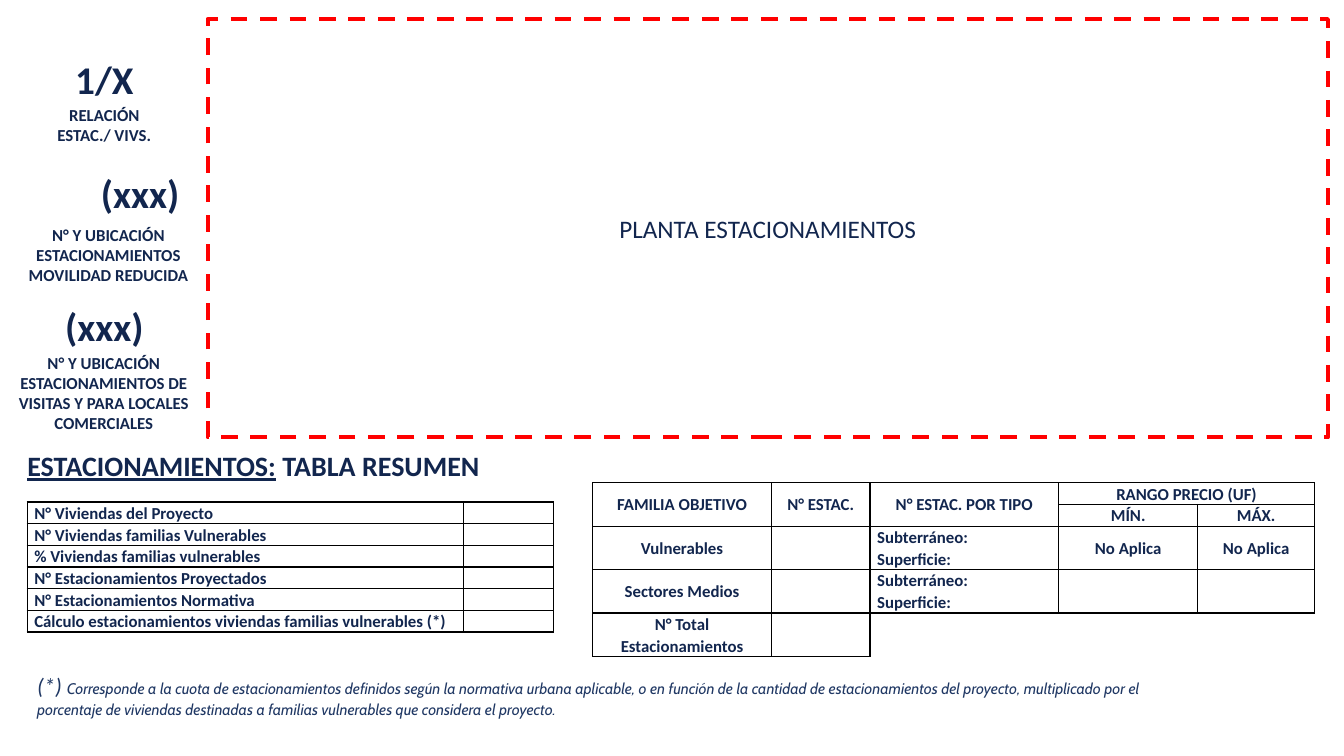
"""Build the parking summary slide with its plan frame and two tables."""
from lxml import etree
from pptx import Presentation
from pptx import util as u
from pptx.dml.color import RGBColor
from pptx.enum import dml, shapes, text
from pptx.oxml import ns

HUES = {"navy": "12264E", "note": "203864", "red": "FF0000", "black": "000000"}
MID = text.PP_ALIGN.CENTER
LEFT = text.PP_ALIGN.LEFT


class Board:
    """Hold the style and the slide; lengths are percent of slide size."""

    def __init__(self, deck):
        self.deck = deck
        self.slide = deck.slides.add_slide(deck.slide_layouts[5])
        self.base = {"name": "Calibri", "size": u.Pt(12), "bold": True}

    def wide(self, part):
        return round(self.deck.slide_width * part / 100)

    def high(self, part):
        return round(self.deck.slide_height * part / 100)

    def area(self, x, y, w, h):
        return self.wide(x), self.high(y), self.wide(w), self.high(h)

    def hue(self, name):
        return RGBColor.from_string(HUES[name])

    def words(self, frame, lines, align=MID, gap=1, hue="navy", **style):
        """Fill a frame; each line is a string or a list of (part, format)."""
        for i, line in enumerate(lines):
            para = frame.add_paragraph() if i else frame.paragraphs[0]
            para.alignment, para.line_spacing = align, gap
            for part, extra in [(line, {})] if isinstance(line, str) else line:
                run = para.add_run()
                run.text = part
                run.font.color.rgb = self.hue(hue)
                for key, value in {**self.base, **style, **extra}.items():
                    setattr(run.font, key, value)

    def label(self, box, lines, wrap=True, **style):
        frame = self.slide.shapes.add_textbox(*self.area(*box)).text_frame
        frame.word_wrap = wrap
        frame.auto_size = text.MSO_AUTO_SIZE.SHAPE_TO_FIT_TEXT
        self.words(frame, lines, **style)

    def title(self, box, lines, **style):
        head = self.slide.shapes.title
        head.left, head.top, head.width, head.height = self.area(*box)
        form = {"word_wrap": True, "auto_size": text.MSO_AUTO_SIZE.NONE,
                "vertical_anchor": text.MSO_ANCHOR.TOP}
        for key, value in form.items():
            setattr(head.text_frame, key, value)
        self.words(head.text_frame, lines, **style)

    def panel(self, box, lines, **style):
        pane = self.slide.shapes.add_shape(shapes.MSO_SHAPE.RECTANGLE, *self.area(*box))
        pane.shadow.inherit = False
        pane.fill.background()
        pane.line.color.rgb = self.hue("red")
        pane.line.width = u.Pt(3)
        pane.line.dash_style = dml.MSO_LINE.DASH
        pane.text_frame.vertical_anchor = text.MSO_ANCHOR.MIDDLE
        self.words(pane.text_frame, lines, **style)

    def edge(self, cell, sides):
        """Draw the named cell sides in black and clear the others."""
        props = cell._tc.get_or_add_tcPr()
        for side in "LRTB":
            line = etree.SubElement(props, ns.qn(f"a:ln{side}"), w=str(u.Pt(1)))
            if side in sides:
                fill = etree.SubElement(line, ns.qn("a:solidFill"))
                etree.SubElement(fill, ns.qn("a:srgbClr"), val=HUES["black"])
            else:
                etree.SubElement(line, ns.qn("a:noFill"))

    def table(self, x, y, cols, rows, cells, aligns, spans=(), bounds=None):
        box = self.area(x, y, sum(cols), sum(rows))
        grid = self.slide.shapes.add_table(len(rows), len(cols), *box).table
        grid.first_row = grid.horz_banding = False
        for col, size in zip(grid.columns, cols):
            col.width = self.wide(size)
        for row, size in zip(grid.rows, rows):
            row.height = self.high(size)
        form = {"margin_left": u.Inches(0.07), "margin_right": u.Inches(0.07),
                "margin_top": 0, "margin_bottom": 0,
                "vertical_anchor": text.MSO_ANCHOR.MIDDLE}
        for r, line in enumerate(cells):
            for c, value in enumerate(line):
                cell = grid.cell(r, c)
                for key, setting in form.items():
                    setattr(cell, key, setting)
                self.edge(cell, (bounds or {}).get((r, c), "LRTB"))
                cell.fill.background()
                if value:
                    align = aligns[c] if r > 1 else aligns[0]
                    self.words(cell.text_frame, value.split("\n"), align, 1.07)
                else:
                    para = cell.text_frame.paragraphs[0]._p
                    etree.SubElement(para, ns.qn("a:endParaRPr"), sz="1200")
        for start, end in spans:
            grid.cell(*start).merge(grid.cell(*end))


def main():
    deck = Presentation()
    deck.slide_width, deck.slide_height = u.Inches(13.33), u.Inches(7.5)
    board = Board(deck)
    big = {"size": u.Pt(28)}

    board.panel((15.45, 2.53, 83.35, 55.33), ["PLANTA ESTACIONAMIENTOS"],
                size=u.Pt(18), bold=False)
    board.label((4.8, 6.67, 5.93, 7.6), ["1/X"], wrap=False, **big)
    board.label((3.45, 13.2, 8.63, 6.67), ["RELACIÓN", "ESTAC./ VIVS."])
    board.label((5.25, 21.73, 10.35, 7.6), ["(xxx)"], **big)
    board.label((1.28, 29.07, 13.58, 9.47),
                ["N° Y UBICACIÓN ESTACIONAMIENTOS MOVILIDAD REDUCIDA"])
    board.label((4.05, 39.33, 7.43, 7.6), ["(xxx)"], wrap=False, **big)
    board.label((0, 46, 15.45, 12.13),
                ["N° Y UBICACIÓN ESTACIONAMIENTOS DE VISITAS Y PARA LOCALES COMERCIALES"])
    board.title((1.28, 58.67, 45.16, 5.87),
                [[("ESTACIONAMIENTOS:", {"underline": True}), (" TABLA RESUMEN", {})]],
                align=LEFT, size=u.Pt(20))

    items = ["N° Viviendas del Proyecto", "N° Viviendas familias Vulnerables",
             "% Viviendas familias vulnerables", "N° Estacionamientos Proyectados",
             "N° Estacionamientos Normativa",
             "Cálculo estacionamientos viviendas familias vulnerables (*)"]
    unit = 2.87
    board.table(2.03, 66.4, [32.48, 6.68], [unit] * len(items),
                [[item, ""] for item in items], [LEFT, LEFT])

    kinds = "Subterráneo:\nSuperficie:"
    cells = [
        ["FAMILIA OBJETIVO", "N° ESTAC.", "N° ESTAC. POR TIPO", "RANGO PRECIO (UF)", ""],
        ["", "", "", "MÍN.", "MÁX."],
        ["Vulnerables", "", kinds, "No Aplica", "No Aplica"],
        ["Sectores Medios", "", kinds, "", ""],
        ["N° Total\nEstacionamientos", "", "", "", ""],
    ]
    spans = [((0, c), (1, c)) for c in range(3)] + [((0, 3), (0, 4)), ((4, 2), (4, 4))]
    board.table(44.11, 63.87, [13.28, 7.35, 14.03, 10.35, 8.7],
                [unit] * 2 + [2 * unit] * 3, cells, [MID, MID, LEFT, MID, MID], spans,
                {(4, 2): "LT", (4, 3): "T", (4, 4): "T"})

    board.label((2.03, 88, 84.02, 7.87), [[
        ("(*) ", {"size": u.Pt(16)}),
        ("Corresponde a la cuota de estacionamientos definidos según la normativa urbana "
         "aplicable, o en función de la cantidad de estacionamientos del proyecto, "
         "multiplicado por el porcentaje de viviendas destinadas a familias vulnerables "
         "que considera el proyecto.", {"name": "Cabin", "size": u.Pt(11)})]],
        align=LEFT, gap=1.07, hue="note", bold=False, italic=True)
    deck.save("out.pptx")


if __name__ == "__main__":
    main()
